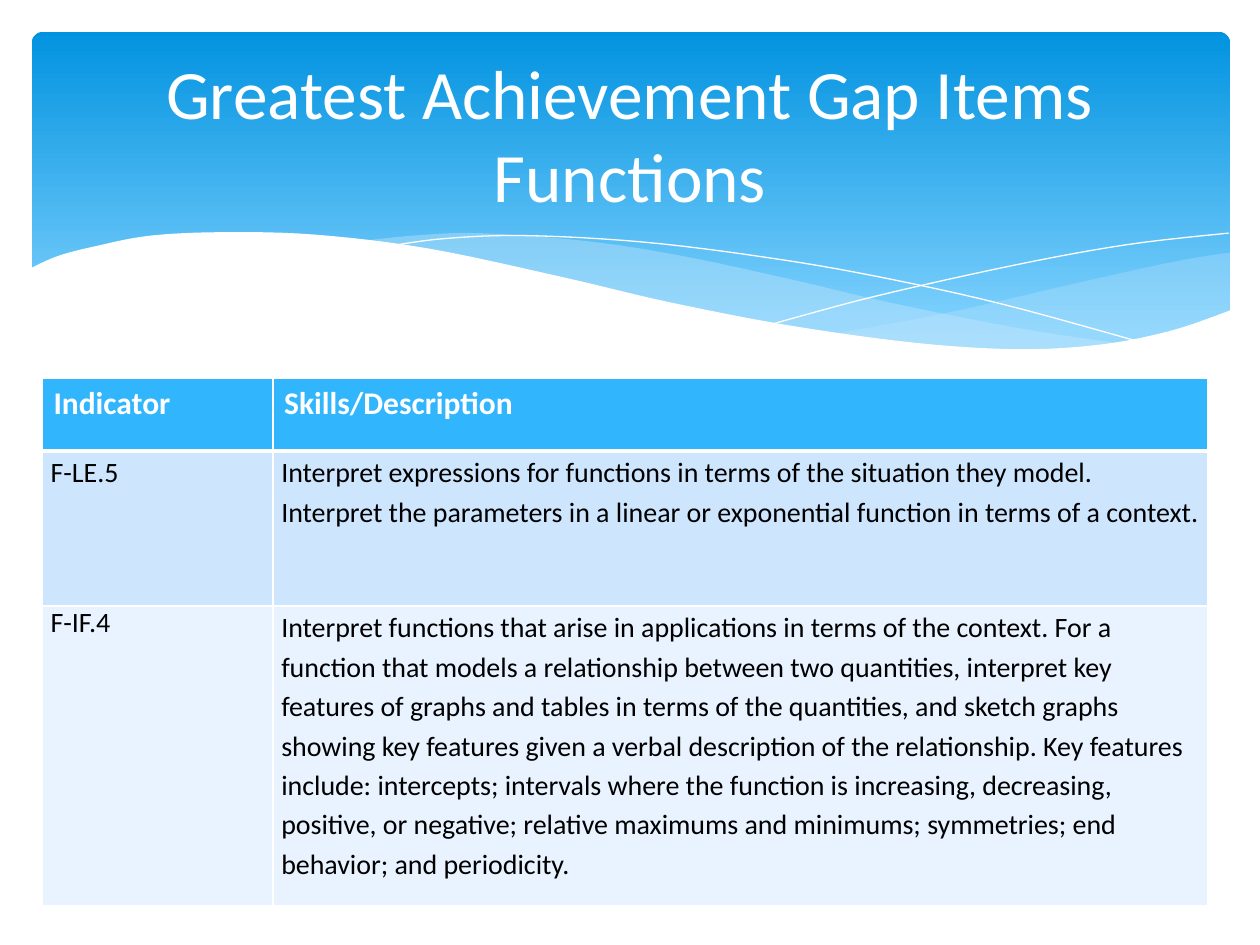
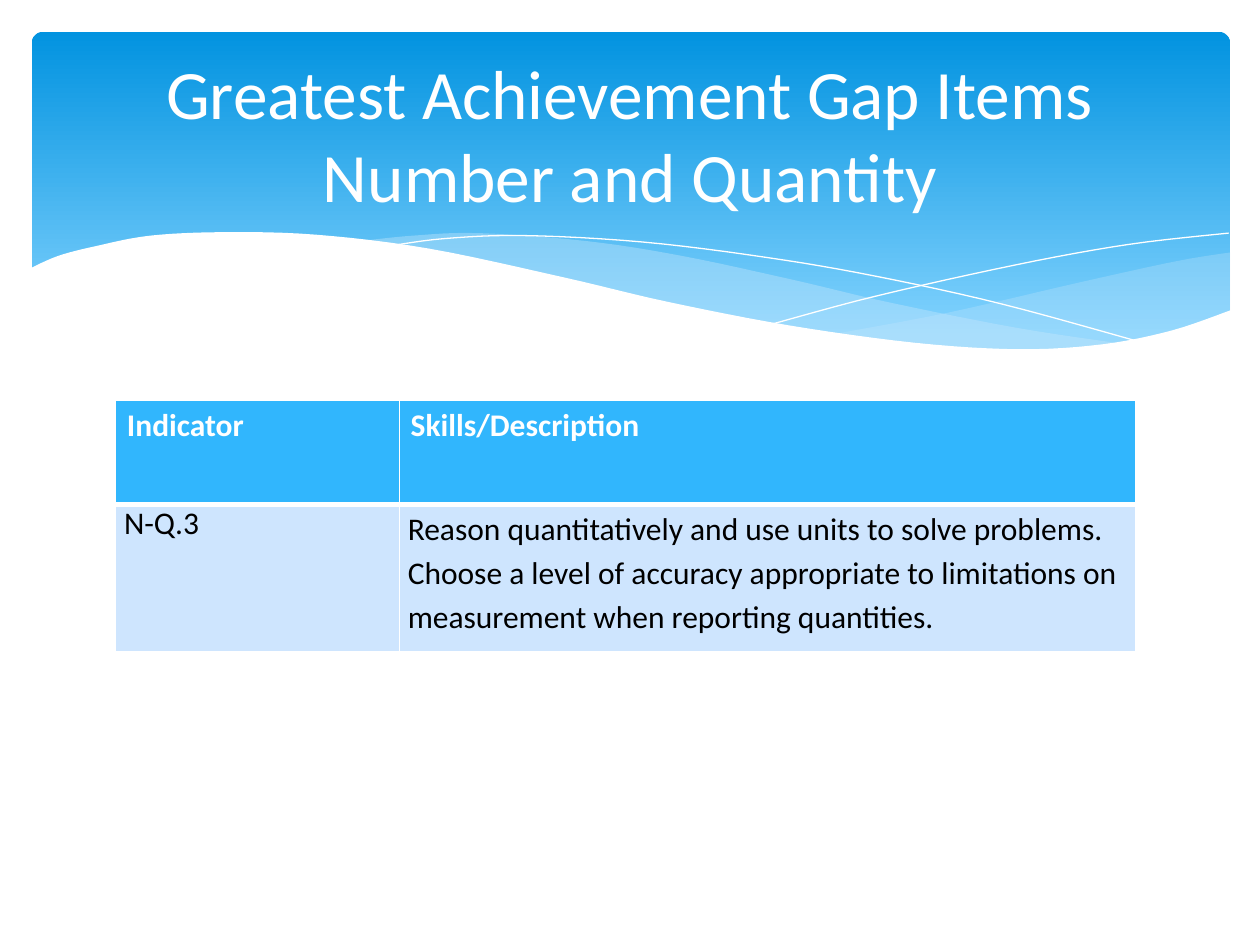
from pptx import Presentation
from pptx import util as u
from pptx.dml import color
from pptx.enum import shapes, text
from pptx.oxml import xmlchemy

FONT = "Calibri"
WHITE, BLACK = "FFFFFF", "000000"
BAND_TOP, BAND_BOTTOM, WAVE = "0293E0", "83D3FE", "C6E7FC"
HEADER_FILL, ROW_FILLS = "31B6FD", ("CEE5FE", "E8F3FF")
BAND_BOX = (0.64, 0.64, 24.16, 6.86)
TITLE_BOX = (1.27, 0.94, 22.86, 3.48)
CURVE_STEPS = 6

RIGHT_WAVE = (
    [(24.16, 4.45), (23.11, 4.62), (21.23, 5.03), (18.49, 5.66), (16.15, 6.1)],
    [(16.15, 6.1), (17.63, 6.25), (19.76, 6.43), (21.74, 6.3), (23.11, 6.02),
     (24.16, 5.64)],
)
MIDDLE_WAVE = (
    [(22.05, 6.3), (19.86, 5.97), (17.3, 5.46), (15.34, 5), (13.11, 4.52),
     (11.18, 4.22), (9.02, 4.06), (7.7, 4.11), (6.63, 4.22)],
    [(6.63, 4.22), (8.56, 4.52), (10.77, 5), (13.74, 5.66), (16.26, 6.12),
     (18.36, 6.38), (20.14, 6.43), (22.05, 6.3)],
)
FALLING_LINE = [(7.21, 4.32), (8.33, 4.17), (9.93, 4.11), (12.32, 4.24),
                (14.81, 4.55), (17.02, 4.93), (19.56, 5.49), (22.4, 6.27)]
RISING_LINE = [(14.94, 5.89), (17.02, 5.33), (19.84, 4.7), (22.1, 4.29),
               (24.13, 4.06)]
FRONT_WAVE = [(24.18, 5.61), (22.99, 6.02), (21.59, 6.3), (19.91, 6.4),
              (17.81, 6.27), (15.27, 5.92), (12.8, 5.44), (10.72, 4.95),
              (8, 4.37), (5.72, 4.09), (3.86, 4.04), (2.39, 4.11),
              (1.3, 4.32), (0.53, 4.52), (-0.05, 4.78)]
FRONT_CORNERS = [(-0.05, 7.72), (24.18, 7.72)]


def rgb(value):
    return color.RGBColor.from_string(value)


def cm_box(box):
    return [u.Cm(length) for length in box]


def child(parent, tag, **attributes):
    element = xmlchemy.OxmlElement(tag)
    for name, value in attributes.items():
        element.set(name, str(value))
    parent.append(element)
    return element


def smooth(knots):
    padded = [knots[0], *knots, knots[-1]]
    points = []
    for a, b, c, d in zip(padded, padded[1:], padded[2:], padded[3:]):
        for step in range(CURVE_STEPS):
            t = step / CURVE_STEPS
            points.append(tuple(
                q + t * ((r - p) + t * ((2 * p - 5 * q + 4 * r - s)
                         + t * (3 * q - p - 3 * r + s))) / 2
                for p, q, r, s in zip(a, b, c, d)))
    return points + [knots[-1]]


def add_outline(page, box, points, closed):
    left, top = box[:2]
    placed = [(u.Cm(left + x), u.Cm(top + y)) for x, y in points]
    builder = page.shapes.build_freeform(*placed[0], scale=1.0)
    builder.add_line_segments(placed[1:], close=closed)
    outline = builder.convert_to_shape()
    outline.shadow.inherit = False
    return outline


def add_wave(page, box, points, fill, opacity=100):
    wave = add_outline(page, box, points, True)
    wave.fill.solid()
    wave.fill.fore_color.rgb = rgb(fill)
    wave.line.fill.background()
    if opacity < 100:
        fill_color = wave.fill._xPr.find(".//{*}srgbClr")
        child(fill_color, "a:alpha", val=opacity * 1000)


def add_hairline(page, box, knots):
    hairline = add_outline(page, box, smooth(knots), False)
    hairline.fill.background()
    hairline.line.color.rgb = rgb(WHITE)
    hairline.line.width = u.Pt(0)


def add_band(page, box):
    band = page.shapes.add_shape(shapes.MSO_SHAPE.ROUNDED_RECTANGLE, *cm_box(box))
    band.adjustments[0] = 0.034
    band.shadow.inherit = False
    band.line.fill.background()
    band.fill.gradient()
    band.fill.gradient_angle = 270
    stops = zip(band.fill.gradient_stops, (BAND_TOP, BAND_BOTTOM), (0, 0.9))
    for stop, value, position in stops:
        stop.color.rgb = rgb(value)
        stop.position = position
    for (upper, lower), opacity in ((RIGHT_WAVE, 29), (MIDDLE_WAVE, 40)):
        add_wave(page, box, smooth(upper) + smooth(lower), WAVE, opacity)
    for knots in (FALLING_LINE, RISING_LINE):
        add_hairline(page, box, knots)
    add_wave(page, box, smooth(FRONT_WAVE) + FRONT_CORNERS, WHITE)


def add_span(para, words, size, value, bold=False):
    span = para.add_run()
    span.text = words
    span.font.name = FONT
    span.font.size = u.Pt(size)
    span.font.bold = bold
    span.font.color.rgb = rgb(value)


def add_title(page, box, lines):
    frame = page.shapes.add_textbox(*cm_box(box)).text_frame
    frame.word_wrap = True
    frame.vertical_anchor = text.MSO_ANCHOR.MIDDLE
    para = frame.paragraphs[0]
    para.alignment = text.PP_ALIGN.CENTER
    for index, line in enumerate(lines):
        if index:
            para.add_line_break()
        add_span(para, line, 39.6, WHITE)


def set_borders(cell, top, bottom):
    properties = cell._tc.get_or_add_tcPr()
    for side, width in (("L", 1), ("R", 1), ("T", top), ("B", bottom)):
        border = child(properties, f"a:ln{side}", w=u.Pt(width))
        child(child(border, "a:solidFill"), "a:srgbClr", val=WHITE)


def fill_cell(cell, words, row, size, spacing):
    header = row == 0
    set_borders(cell, 3 if row == 1 else 1, 3 if header else 1)
    side, edge = (0.23, 0.13) if header else (0.17, 0)
    cell.margin_left = cell.margin_right = u.Cm(side)
    cell.margin_top = cell.margin_bottom = u.Cm(edge)
    cell.fill.solid()
    cell.fill.fore_color.rgb = rgb(HEADER_FILL if header else ROW_FILLS[(row - 1) % 2])
    para = cell.text_frame.paragraphs[0]
    if spacing:
        para.line_spacing = spacing
    add_span(para, words, 18 if header else size, WHITE if header else BLACK, header)


def add_indicators(page, box, code_width, heights, size, indicators):
    rows = [("Indicator", "Skills/Description", None), *indicators]
    table = page.shapes.add_table(len(rows), 2, *cm_box(box)).table
    table.horz_banding = False
    for column, width in zip(table.columns, (code_width, box[2] - code_width)):
        column.width = u.Cm(width)
    for index, (code, skills, code_spacing) in enumerate(rows):
        table.rows[index].height = u.Cm(heights[index])
        fill_cell(table.cell(index, 0), code, index, size, code_spacing)
        fill_cell(table.cell(index, 1), skills, index, size, 1.15 if index else None)


def add_gap_page(deck, topic, **table):
    page = deck.slides.add_slide(deck.slide_layouts[6])
    add_band(page, BAND_BOX)
    add_indicators(page, **table)
    add_title(page, TITLE_BOX, ("Greatest Achievement Gap Items", topic))


def main():
    deck = Presentation()
    deck.slide_width, deck.slide_height = u.Cm(25.4), u.Cm(19.05)
    add_gap_page(
        deck, "Functions", box=(0.85, 7.62, 23.5, 10.64), code_width=4.65,
        heights=(1.47, 3.13, 6.04), size=16,
        indicators=[
            ("F-LE.5", "Interpret expressions for functions in terms of the "
             "situation they model. Interpret the parameters in a linear or "
             "exponential function in terms of a context.", 1.15),
            ("F-IF.4", "Interpret functions that arise in applications in terms "
             "of the context. For a function that models a relationship between "
             "two quantities, interpret key features of graphs and tables in "
             "terms of the quantities, and sketch graphs showing key features "
             "given a verbal description of the relationship. Key features "
             "include: intercepts; intervals where the function is increasing, "
             "decreasing, positive, or negative; relative maximums and minimums; "
             "symmetries; end behavior; and periodicity.", None),
        ])
    add_gap_page(
        deck, "Number and Quantity", box=(2.33, 8.06, 20.57, 5.08), code_width=5.72,
        heights=(2.11, 2.97), size=18,
        indicators=[
            ("N-Q.3", "Reason quantitatively and use units to solve problems. "
             "Choose a level of accuracy appropriate to limitations on "
             "measurement when reporting quantities.", None),
        ])
    deck.save("out.pptx")


if __name__ == "__main__":
    main()
